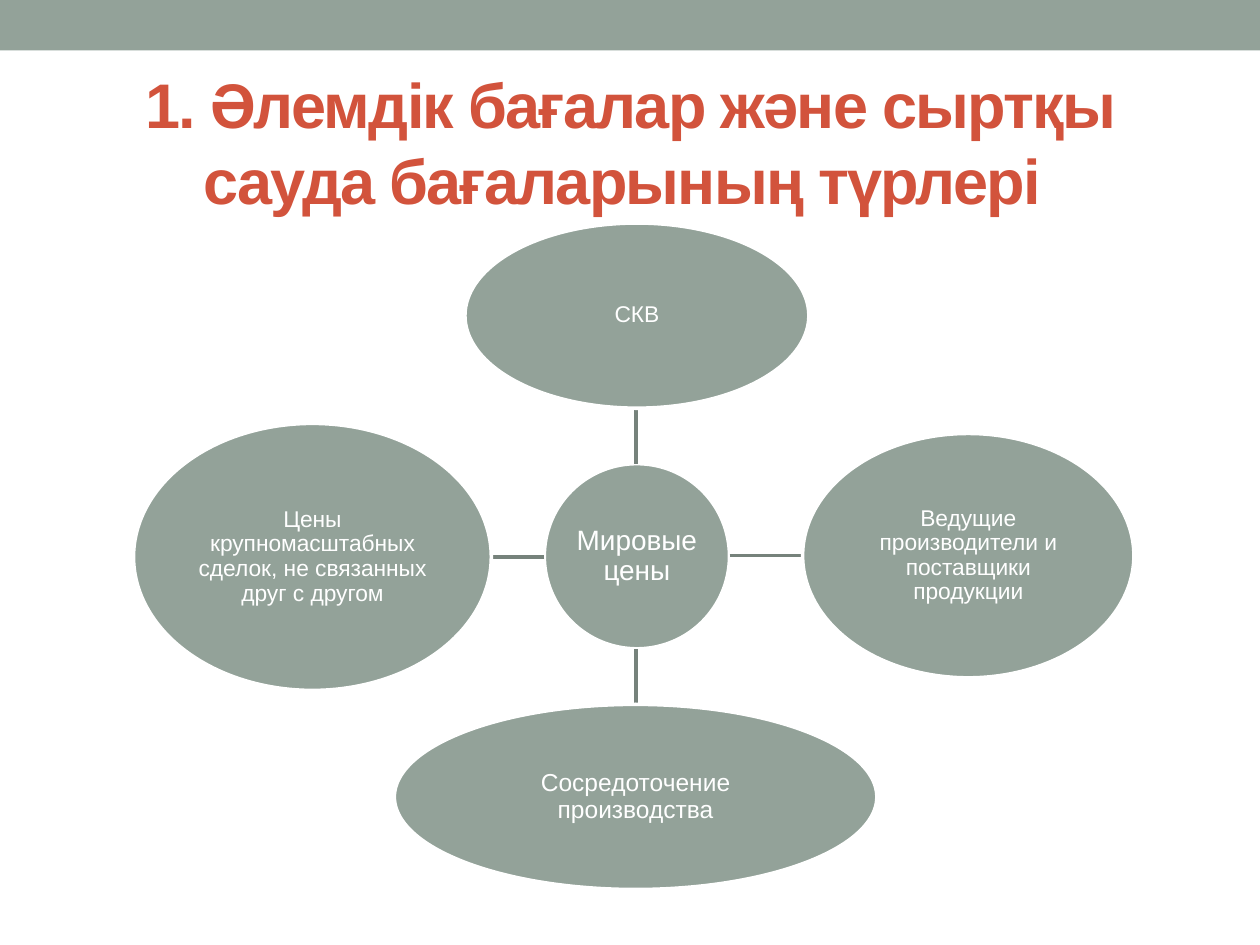
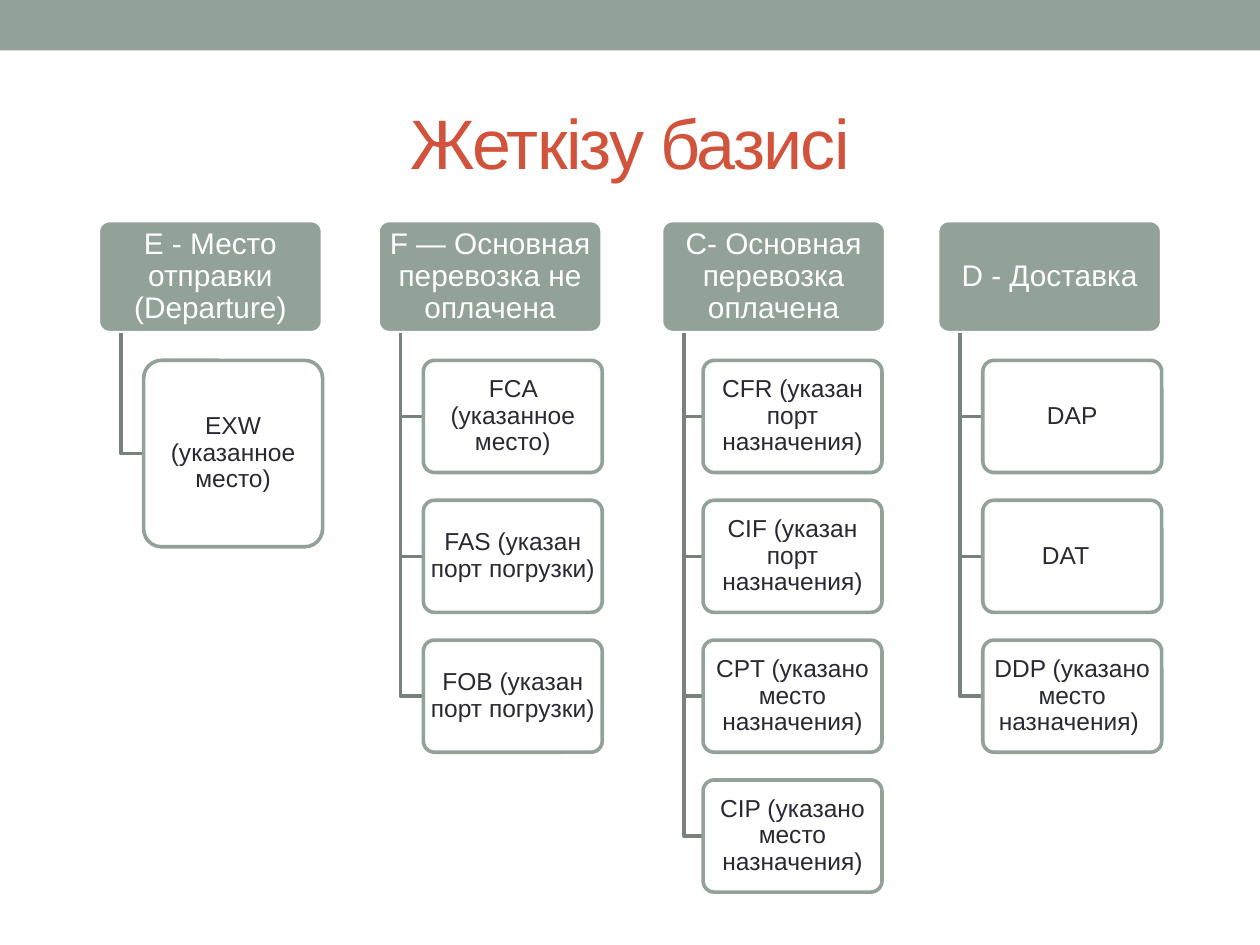
from lxml import etree
from pptx import Presentation
from pptx.dml.color import RGBColor
from pptx.enum.shapes import MSO_CONNECTOR as Connector, MSO_SHAPE as Shape
from pptx.enum.text import MSO_ANCHOR as Anchor, MSO_AUTO_SIZE as AutoSize, PP_ALIGN as Align
from pptx.oxml.ns import qn
from pptx.util import Inches, Pt

SAGE = RGBColor(0x93, 0xA2, 0x99)
LINK = RGBColor(0x76, 0x82, 0x7B)
RED = RGBColor(0xD2, 0x53, 0x3C)
INK = RGBColor(0x29, 0x29, 0x34)
WHITE = RGBColor(0xFF, 0xFF, 0xFF)
FONT = "Arial"
LINE_WIDTH = Pt(2.08)


class Deck:
    """Holds the shared style and the slide being built."""

    def __init__(self):
        self.prs = Presentation()
        self.prs.slide_width, self.prs.slide_height = Inches(10), Inches(7.5)
        self.slide = None

    def new_slide(self, title, size, bold=False):
        self.slide = self.prs.slides.add_slide(self.prs.slide_layouts[5])
        band = self.shape(Shape.RECTANGLE, 0, 0, 10, 0.4, SAGE)
        band.line.fill.background()

        heading = self.slide.shapes.title
        heading.left, heading.top = Inches(0.5), Inches(0.58)
        heading.width, heading.height = Inches(9), Inches(1.08)
        self.set_text(heading, title, size, RED)
        heading.text_frame.auto_size = AutoSize.NONE
        run = heading.text_frame.paragraphs[0].runs[0]
        run.font.bold = bold
        run._r.get_or_add_rPr().set("spc", "-100")

    def set_text(self, shape, text, size, color):
        frame = shape.text_frame
        frame.text = text
        frame.word_wrap = True
        frame.vertical_anchor = Anchor.MIDDLE
        paragraph = frame.paragraphs[0]
        paragraph.alignment = Align.CENTER
        font = paragraph.runs[0].font
        font.name, font.size, font.color.rgb = FONT, Pt(size), color

    def shape(self, kind, left, top, width, height, fill, line=WHITE):
        shape = self.slide.shapes.add_shape(
            kind, Inches(left), Inches(top), Inches(width), Inches(height))
        shape.shadow.inherit = False
        shape.fill.solid()
        shape.fill.fore_color.rgb = fill
        shape.line.color.rgb, shape.line.width = line, LINE_WIDTH
        return shape

    def label(self, shape, text, size, color, inset_x, inset_y):
        self.set_text(shape, text, size, color)
        frame = shape.text_frame
        frame.margin_left = frame.margin_right = Inches(inset_x)
        frame.margin_top = frame.margin_bottom = Inches(inset_y)
        frame.paragraphs[0].line_spacing = 0.9

    def oval(self, left, top, width, height, text, size):
        oval = self.shape(Shape.OVAL, left, top, width, height, SAGE)
        self.label(oval, text, size, WHITE, 0.01, 0.01)

    def header_box(self, left, top, width, height, text):
        box = self.shape(Shape.ROUNDED_RECTANGLE, left, top, width, height, SAGE)
        box.adjustments[0] = 0.1
        self.label(box, text, 17, WHITE, 0.04, 0.02)

    def term_box(self, left, top, width, height, text):
        box = self.shape(Shape.ROUNDED_RECTANGLE, left, top, width, height, WHITE, SAGE)
        box.adjustments[0] = 0.1
        white = box._element.spPr.find(qn("a:solidFill"))[0]
        etree.SubElement(white, qn("a:alpha"), val="90000")
        self.label(box, text, 14, INK, 0.03, 0.02)

    def link(self, x1, y1, x2, y2):
        link = self.slide.shapes.add_connector(
            Connector.STRAIGHT, Inches(x1), Inches(y1), Inches(x2), Inches(y2))
        link.line.color.rgb, link.line.width = LINK, LINE_WIDTH
        etree.SubElement(link._element.spPr, qn("a:effectLst"))

    def elbow(self, x1, y1, x2, y2):
        outline = self.slide.shapes.build_freeform(Inches(x1), Inches(y1))
        outline.add_line_segments(
            [(Inches(x1), Inches(y2)), (Inches(x2), Inches(y2))], close=False)
        elbow = outline.convert_to_shape()
        elbow.shadow.inherit = False
        elbow.fill.background()
        elbow.line.color.rgb, elbow.line.width = LINK, LINE_WIDTH


def world_prices(deck):
    deck.new_slide("1. Әлемдік бағалар және сыртқы сауда бағаларының түрлері ", 36, bold=True)

    # Hub
    deck.oval(4.32, 3.68, 1.47, 1.47, "Мировые цены", 16)

    # Factors around it: link, oval, text, size
    factors = [
        ((5.05, 3.68, 5.05, 3.24), (3.69, 1.77, 2.73, 1.47), "СКВ", 13),
        ((5.79, 4.41, 6.37, 4.41), (6.37, 3.44, 2.63, 1.94),
         "Ведущие производители и поставщики продукции", 13),
        ((5.05, 5.15, 5.05, 5.59), (3.13, 5.59, 3.83, 1.47),
         "Сосредоточение производства", 14),
        ((4.32, 4.42, 3.9, 4.42), (1.06, 3.36, 2.84, 2.12),
         "Цены крупномасштабных сделок, не связанных друг с другом", 13),
    ]
    for ends, place, text, size in factors:
        deck.link(*ends)
        deck.oval(*place, text, size)


def delivery_basis(deck):
    deck.new_slide("Жеткізу базисі", 40)

    # Groups: left edge, heading, height of each term, terms
    groups = [
        (0.78, "E - Место отправки (Departure)", 1.48, ["EXW (указанное место)"]),
        (3, "F — Основная перевозка не оплачена", 0.89,
         ["FCA (указанное место)", "FAS (указан порт погрузки)",
          "FOB (указан порт погрузки)"]),
        (5.25, "C- Основная перевозка оплачена", 0.89,
         ["CFR (указан порт назначения)", "CIF (указан порт назначения)",
          "CPT (указано место назначения)", "CIP (указано место назначения)"]),
        (7.44, "D - Доставка", 0.89,
         ["DAP", "DAT  ", "DDP (указано место назначения) "]),
    ]
    head_top, head_height = 1.75, 0.89
    first_term_top, term_step = 2.86, 1.11
    first_term_left, group_step = 1.14, 2.22

    for column, (left, heading, term_height, terms) in enumerate(groups):
        deck.header_box(left, head_top, 1.78, head_height, heading)
        term_left = first_term_left + column * group_step
        for row, term in enumerate(terms):
            top = first_term_top + row * term_step
            deck.elbow(left + 0.18, head_top + head_height, term_left, top + term_height / 2)
            deck.term_box(term_left, top, 1.42, term_height, term)


def main():
    deck = Deck()
    world_prices(deck)
    delivery_basis(deck)
    deck.prs.save("out.pptx")


if __name__ == "__main__":
    main()
